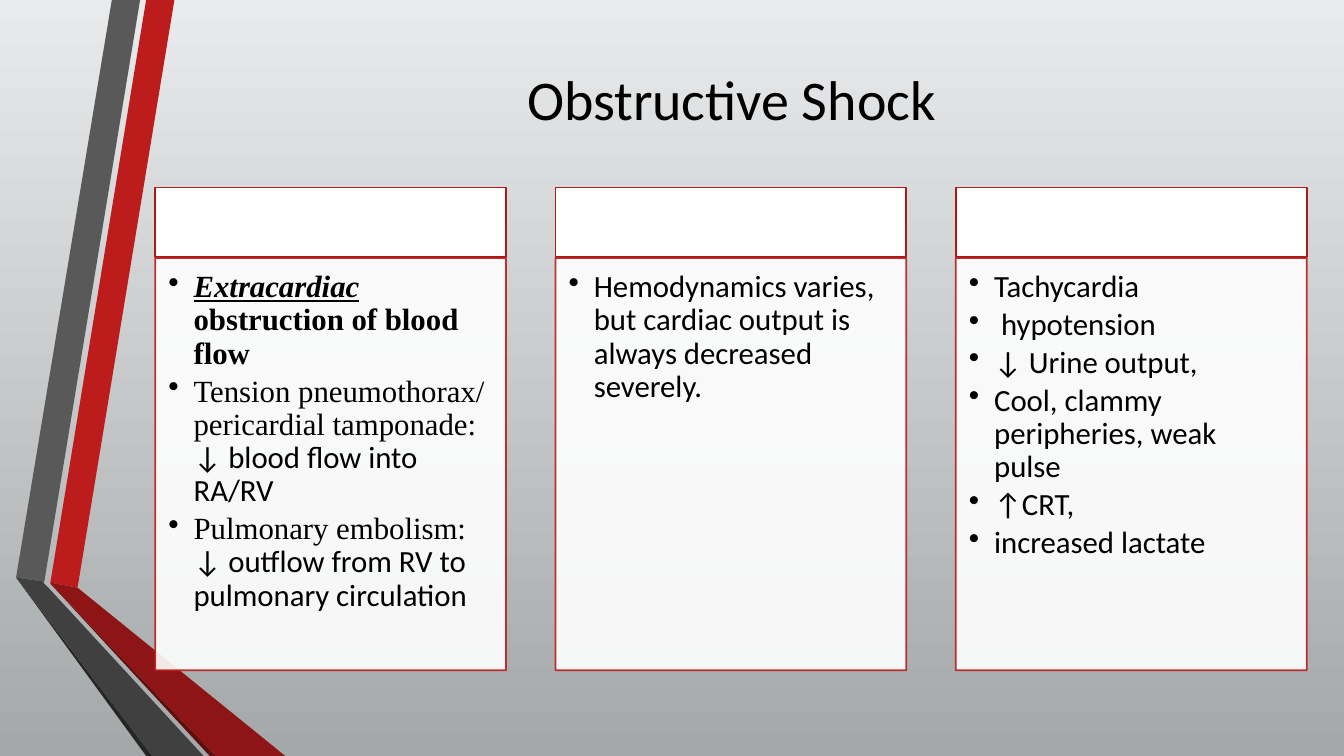
from dataclasses import dataclass

from lxml import etree
from pptx import Presentation
from pptx.dml.color import RGBColor
from pptx.enum.shapes import MSO_SHAPE
from pptx.enum.text import MSO_ANCHOR, PP_ALIGN
from pptx.oxml.ns import qn
from pptx.util import Inches, Pt

RECTANGLE = MSO_SHAPE.RECTANGLE
MIDDLE, TOP = MSO_ANCHOR.MIDDLE, MSO_ANCHOR.TOP
CENTER, LEFT = PP_ALIGN.CENTER, PP_ALIGN.LEFT


@dataclass(frozen=True)
class Theme:
    background_top: str = "E9EAEB"
    background_bottom: str = "A5A8A9"
    red: str = "BC1C1C"
    red_border: str = "AB1919"
    red_shade: str = "8D1515"
    red_edge: str = "5E0E0E"
    gray: str = "595959"
    gray_shade: str = "404040"
    gray_edge: str = "262626"
    panel: str = "FFFFFF"
    text: str = "000000"
    sans: str = "Calibri"
    serif: str = "Times New Roman"
    title_size: int = 40
    body_size: int = 22


theme = Theme()


def add_run(paragraph, text, font_name, size, emphasis=()):
    run = paragraph.add_run()
    run.text = text
    run.font.name = font_name
    run.font.size = Pt(size)
    run.font.color.rgb = RGBColor.from_string(theme.text)
    for style in emphasis:
        setattr(run.font, style, True)


def set_alpha(color_format_parent, percent):
    """Make every solid colour below the given XML element translucent."""
    for color in color_format_parent.iter(qn("a:srgbClr")):
        etree.SubElement(color, qn("a:alpha")).set("val", str(percent * 1000))


presentation = Presentation()
presentation.slide_width = Inches(13.33)
presentation.slide_height = Inches(7.5)
slide = presentation.slides.add_slide(presentation.slide_layouts[6])

background = slide.background.fill
background.gradient()
background.gradient_angle = 270
for stop, color in zip(background.gradient_stops, (theme.background_top, theme.background_bottom)):
    stop.color.rgb = RGBColor.from_string(color)

# Folded ribbons along the left edge
ribbons = [
    (theme.red, [(0.5, 5.78), (0.77, 5.83), (1.73, 0), (1.45, 0)]),
    (theme.gray, [(1.39, 0), (1.11, 0), (0.16, 5.73), (0.44, 5.77)]),
    (theme.gray_edge, [(0.16, 5.73), (1.45, 7.5), (1.51, 7.5)]),
    (theme.red_edge, [(0.5, 5.79), (2.08, 7.5), (2.14, 7.5)]),
    (theme.red_shade, [(0.5, 5.79), (2.14, 7.5), (2.83, 7.5), (0.77, 5.83), (0.5, 5.78)]),
    (theme.gray_shade, [(2.02, 7.5), (0.48, 5.83), (0.43, 5.78), (0.44, 5.77),
                        (0.16, 5.73), (1.51, 7.5)]),
]
for color, corners in ribbons:
    points = [(Inches(x), Inches(y)) for x, y in corners]
    builder = slide.shapes.build_freeform(*points[0])
    builder.add_line_segments(points[1:], close=True)
    ribbon = builder.convert_to_shape()
    ribbon.shadow.inherit = False
    ribbon.fill.solid()
    ribbon.fill.fore_color.rgb = RGBColor.from_string(color)
    ribbon.line.fill.background()

title = slide.shapes.add_textbox(Inches(1.93), Inches(0.46), Inches(10.65), Inches(1.02))
title.text_frame.word_wrap = True
title.text_frame.vertical_anchor = MIDDLE
title_paragraph = title.text_frame.paragraphs[0]
title_paragraph.alignment = CENTER
add_run(title_paragraph, "Obstructive Shock", theme.sans, theme.title_size)

# Each column is a list of bullets; each bullet is a list of runs
columns = [
    [
        [("Extracardiac", theme.serif, ("bold", "italic", "underline")),
         (" obstruction of blood flow", theme.serif, ("bold",))],
        [("Tension pneumothorax/ pericardial tamponade: ", theme.serif),
         ("↓ blood flow into RA/RV", theme.sans)],
        [("Pulmonary embolism: ", theme.serif),
         ("↓ outflow from RV to pulmonary circulation", theme.sans)],
    ],
    [[("Hemodynamics varies, but cardiac output is always decreased severely.", theme.sans)]],
    [[(text, theme.sans)] for text in (
        "Tachycardia", " hypotension", "↓ Urine output,",
        "Cool, clammy peripheries, weak pulse", "↑CRT,", "increased lactate")],
]
column_left, column_step, column_width = 1.54, 3.97, 3.48
header_top, header_height = 1.86, 0.69
body_top, body_height = 2.56, 4.09

for index, bullets in enumerate(columns):
    left = Inches(column_left + index * column_step)
    boxes = []
    for top, height, border in ((header_top, header_height, theme.red_border),
                                (body_top, body_height, theme.red)):
        box = slide.shapes.add_shape(RECTANGLE, left, Inches(top), Inches(column_width), Inches(height))
        box.shadow.inherit = False
        box.fill.solid()
        box.fill.fore_color.rgb = RGBColor.from_string(theme.panel)
        box.line.color.rgb = RGBColor.from_string(border)
        box.line.width = Pt(1.25)
        boxes.append(box)

    body = boxes[1]
    set_alpha(body.element.spPr, 90)
    frame = body.text_frame
    frame.word_wrap = True
    frame.vertical_anchor = TOP
    frame.margin_left = frame.margin_top = Inches(0.13)
    frame.margin_right, frame.margin_bottom = Inches(0.17), Inches(0.19)
    for number, runs in enumerate(bullets):
        paragraph = frame.add_paragraph() if number else frame.paragraphs[0]
        paragraph.alignment = LEFT
        paragraph.level = 1
        paragraph.line_spacing = 0.9
        paragraph.space_after = Pt(3.3)
        properties = paragraph._p.get_or_add_pPr()
        properties.set("marL", str(Inches(0.25)))
        properties.set("indent", str(Inches(-0.25)))
        etree.SubElement(properties, qn("a:buChar")).set("char", "•")
        for text, font_name, *emphasis in runs:
            add_run(paragraph, text, font_name, theme.body_size, *emphasis)

presentation.save("out.pptx")
